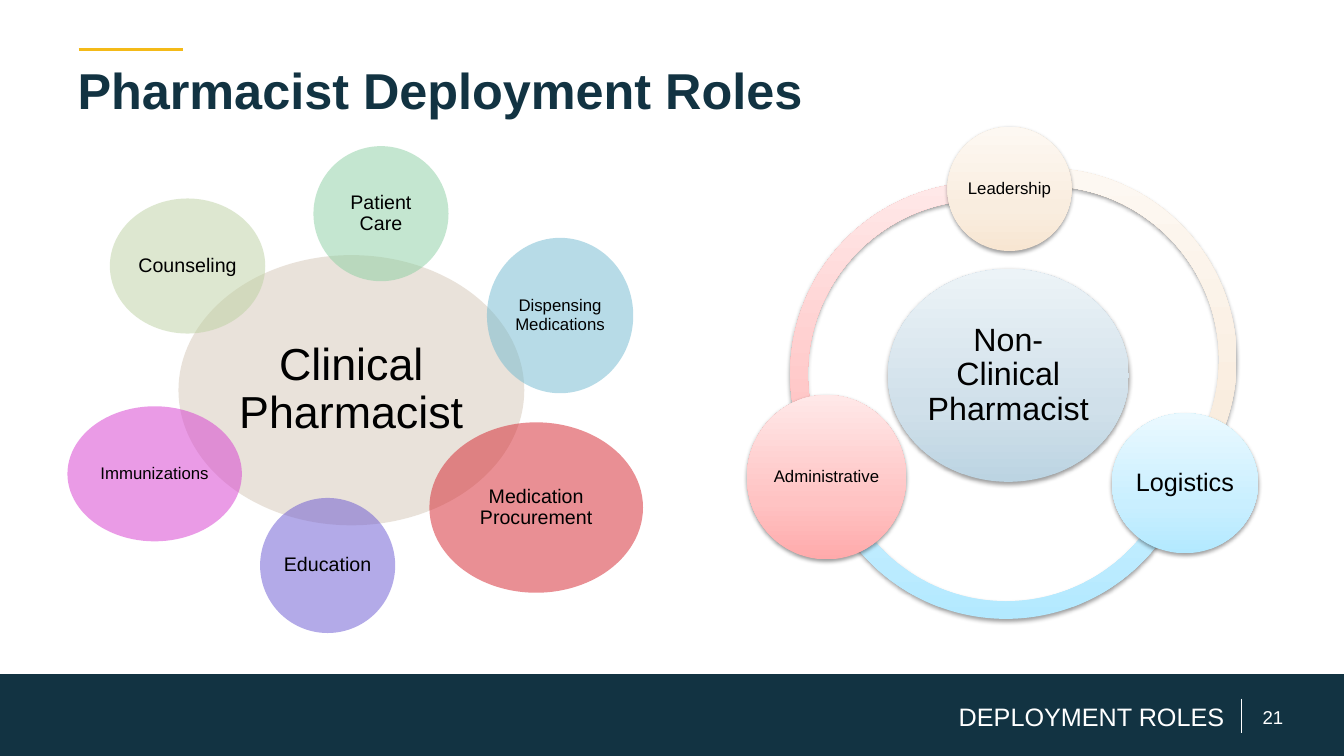
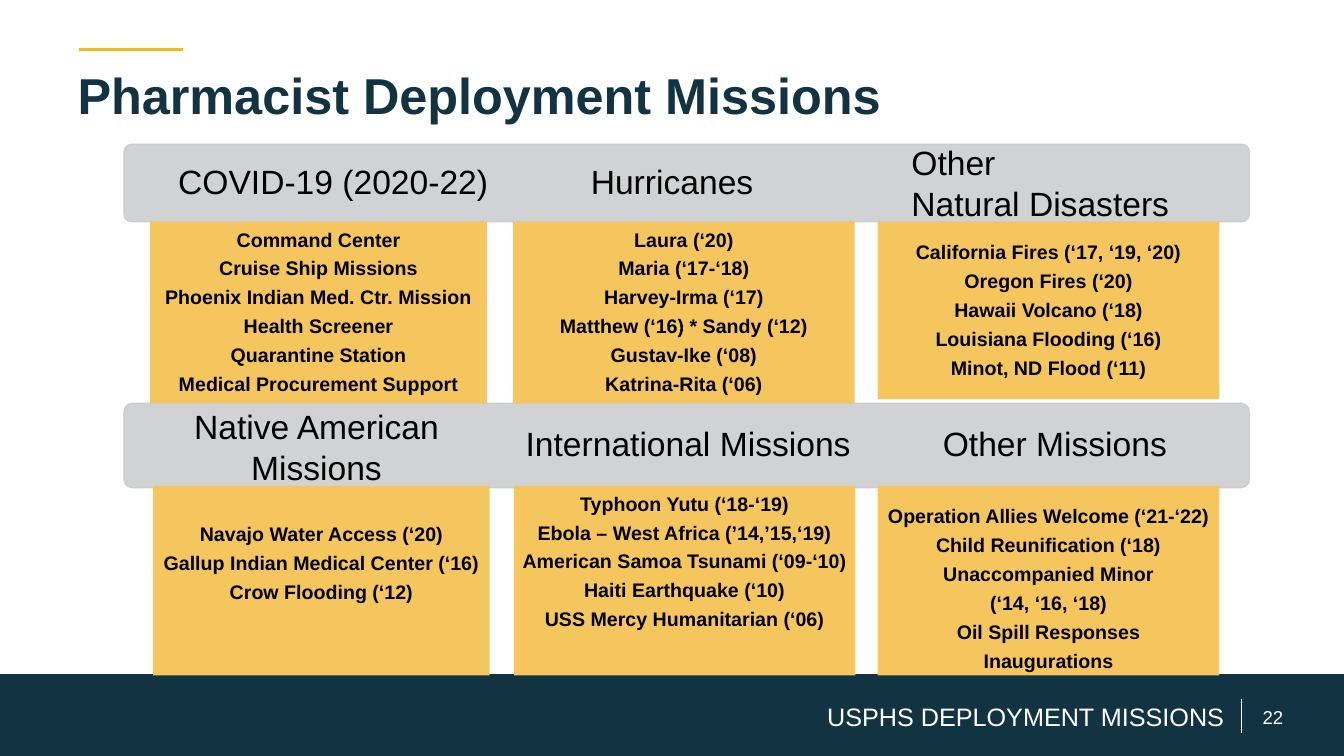
from lxml.etree import SubElement
from pptx import Presentation
from pptx.dml.color import RGBColor
from pptx.enum.shapes import MSO_CONNECTOR as Connector, MSO_SHAPE as Preset
from pptx.enum.text import MSO_ANCHOR as Anchor, PP_ALIGN as Align
from pptx.oxml.ns import qn
from pptx.util import Pt

FONT = "Arial"
COLORS = {
    "navy": "123342", "gold": "F4BA18", "white": "FFFFFF", "black": "000000",
    "bar": "CCCECF", "bar_edge": "C7C9CB", "card": "F5C65D",
    "sand": "D5C7B7", "olive": "BDD1A2", "green": "8BCFA2", "teal": "71B9D0",
    "violet": "6856D2", "magenta": "D639CF", "red": "D5212B",
}
GRADIENTS = {
    "rose": ("FFAAAB", "FFC3C3", "FFE8E8"),
    "sky": ("B3E9FF", "C9EFFF", "EAF9FF"),
    "cream": ("F8E6D2", "F9EDDF", "FDF8F2"),
    "steel": ("BCD4E2", "D0E0EA", "ECF3F7"),
}
GRADIENT_STOPS = (0, 35, 100)

# label, font size, colour, (left, top, width, height)
CLINICAL_ROLES = [
    ("Clinical Pharmacist", 32, "sand", (127.5, 182.2, 247, 193)),
    ("Counseling", 14, "olive", (78.5, 141.8, 111, 96.5)),
    ("Patient Care", 14, "green", (223.9, 104.4, 96.5, 96.5)),
    ("Dispensing Medications", 12, "teal", (347.8, 169.9, 104.5, 111)),
    ("Education", 14, "violet", (185.8, 355.7, 96.5, 96.5)),
    ("Immunizations", 12, "magenta", (48.2, 290.2, 124.6, 96.5)),
    ("Medication Procurement", 14, "red", (306.7, 301.7, 152.6, 121.7)),
]
NON_CLINICAL_ROLES = [
    ("Non-Clinical Pharmacist", 23, "steel", (634.3, 192.2, 172, 152)),
    ("Leadership", 12, "cream", (676.8, 90.7, 88.6, 88.6)),
    ("Logistics", 18, "sky", (794.2, 295.2, 104.4, 100)),
    ("Administrative", 12, "rose", (533.5, 282.2, 113.8, 117.4)),
]
# gradient, left, top, block arc adjustments
RING_SIZE = 273.6
RING_ARCS = [
    ("rose", 564.5, 130.3, (87.811, 167.015, 0.046)),
    ("sky", 581.8, 168.5, (10.397, 98.716, 0.046)),
    ("cream", 609.8, 120.2, (157.591, 21.386, 0.046)),
]

HEADER_BARS = [(88.5, 103, 804, 55.5), (88.5, 288, 804, 60.5)]
# lines, centre x, centre y, alignment
HEADERS = [
    (["COVID-19 (2020-22)"], 238, 129.5, Align.CENTER),
    (["Hurricanes"], 480, 129.5, Align.CENTER),
    (["Other", "Natural Disasters"], 776, 130.5, Align.LEFT),
    (["Native American", "Missions"], 226, 319, Align.CENTER),
    (["International Missions"], 491.5, 316.5, Align.CENTER),
    (["Other Missions"], 753.5, 316.5, Align.CENTER),
]
# (left, top, width, height), top inset, lines
MISSION_CARDS = [
    ((107.3, 158.4, 240.5, 129.6), 6, [
        "Command Center", "Cruise Ship Missions", "Phoenix Indian Med. Ctr. Mission",
        "Health Screener", "Quarantine Station", "Medical Procurement Support"]),
    ((366.5, 158.4, 244, 129.6), 6, [
        "Laura (‘20)", "Maria (‘17-‘18)", "Harvey-Irma (‘17)",
        "Matthew (‘16) * Sandy (‘12)", "Gustav-Ike (‘08)", "Katrina-Rita (‘06)"]),
    ((627, 158.4, 244, 126.7), 15, [
        "California Fires (‘17, ‘19, ‘20)", "Oregon Fires (‘20)", "Hawaii Volcano (‘18)",
        "Louisiana Flooding (‘16)", "Minot, ND Flood (‘11)"]),
    ((109.4, 347, 240.5, 135.4), 28, [
        "Navajo Water Access (‘20)", "Gallup Indian Medical Center (‘16)",
        "Crow Flooding (‘12)"]),
    ((367, 347, 244, 135.4), 6, [
        "Typhoon Yutu (‘18-‘19)", "Ebola – West Africa (’14,’15,‘19)",
        "American Samoa Tsunami (‘09-‘10)", "Haiti Earthquake (‘10)",
        "USS Mercy Humanitarian (‘06)"]),
    ((627, 347, 244, 135.4), 15, [
        "Operation Allies Welcome (‘21-‘22)", "Child Reunification (‘18)",
        "Unaccompanied Minor", "(‘14, ‘16, ‘18)", "Oil Spill Responses",
        "Inaugurations"]),
]


def rgb(name):
    return RGBColor.from_string(COLORS[name])


def write(shape, lines, size, color="black", bold=False, align=Align.CENTER,
          anchor=Anchor.MIDDLE, insets=(0, 0), spacing=1.0, gap=0):
    """Fill a shape with one paragraph per line; insets are (side, top)."""
    frame = shape.text_frame
    frame.word_wrap = True
    frame.vertical_anchor = anchor
    frame.margin_left = frame.margin_right = Pt(insets[0])
    frame.margin_top, frame.margin_bottom = Pt(insets[1]), Pt(0)
    for number, line in enumerate(lines):
        para = frame.paragraphs[0] if number == 0 else frame.add_paragraph()
        para.text = line
        para.alignment = align
        para.line_spacing = spacing
        para.space_after = Pt(gap)
        font = para.font
        font.name, font.size, font.bold = FONT, Pt(size), bold
        font.color.rgb = rgb(color)


def add_text(page, box, lines, size, **style):
    write(page.shapes.add_textbox(*map(Pt, box)), lines, size, **style)


def add_shape(page, preset, box, color=None):
    """Add a shape without outline or shadow, flat-filled if a colour is given."""
    shape = page.shapes.add_shape(preset, *map(Pt, box))
    shape.shadow.inherit = False
    shape.line.fill.background()
    if color:
        shape.fill.solid()
        shape.fill.fore_color.rgb = rgb(color)
    return shape


def add_line(page, start, end, color, width):
    line = page.shapes.add_connector(Connector.STRAIGHT, *map(Pt, start + end))
    line.line.color.rgb = rgb(color)
    line.line.width = Pt(width)
    SubElement(line._element.spPr, qn("a:effectLst"))


def set_opacity(shape, percent):
    for color in list(shape._element.spPr.iter(qn("a:srgbClr"))):
        SubElement(color, qn("a:alpha"), val=str(percent * 1000))


def set_glossy(shape, gradient):
    """Give a shape a bottom-to-top gradient and a soft shadow below."""
    shape.fill.gradient()
    shape.fill.gradient_angle = 90
    properties = shape._element.spPr
    stops = properties.find(".//" + qn("a:gsLst"))
    for old_stop in list(stops):
        stops.remove(old_stop)
    for position, color in zip(GRADIENT_STOPS, GRADIENTS[gradient]):
        stop = SubElement(stops, qn("a:gs"), pos=str(position * 1000))
        SubElement(stop, qn("a:srgbClr"), val=color)
    shadow = SubElement(properties.find(qn("a:effectLst")), qn("a:outerShdw"),
                        blurRad=str(Pt(3.1)), dist=str(Pt(1.6)),
                        dir="5400000", rotWithShape="0")
    color = SubElement(shadow, qn("a:srgbClr"), val=COLORS["black"])
    SubElement(color, qn("a:alpha"), val="38000")


def add_role(page, label, size, box, color=None):
    circle = add_shape(page, Preset.OVAL, box, color)
    write(circle, [label], size, insets=(1, 0), spacing=0.9)
    return circle


def add_page(deck, title, title_top, footer, number):
    page = deck.slides.add_slide(deck.slide_layouts[6])
    add_line(page, (56.2, 35.3), (131, 35.3), "gold", 2.5)
    add_shape(page, Preset.RECTANGLE, (0, 481.6, 960, 58.4), "navy")
    add_line(page, (887, 499), (887, 523.5), "white", 0.75)
    add_text(page, (881, 502, 56.5, 20), [str(number)], 13.3, color="white")
    add_text(page, (55.4, title_top, 850, 44), [title], 36, color="navy", bold=True,
             align=Align.LEFT, anchor=Anchor.TOP)
    add_text(page, (554.5, 500, 320, 24), [footer], 18, color="white", align=Align.RIGHT)
    return page


def add_roles_page(deck):
    page = add_page(deck, "Pharmacist Deployment Roles", 42.5, "DEPLOYMENT ROLES", 21)
    for gradient, left, top, adjustments in RING_ARCS:
        arc = add_shape(page, Preset.BLOCK_ARC, (left, top, RING_SIZE, RING_SIZE))
        for index, value in enumerate(adjustments):
            arc.adjustments[index] = value
        set_glossy(arc, gradient)
    for label, size, gradient, box in NON_CLINICAL_ROLES:
        set_glossy(add_role(page, label, size, box), gradient)
    for label, size, color, box in CLINICAL_ROLES:
        circle = add_role(page, label, size, box, color)
        set_opacity(circle, 50)


def add_missions_page(deck):
    page = add_page(deck, "Pharmacist Deployment Missions", 45.5,
                    "USPHS DEPLOYMENT MISSIONS", 22)
    for box in HEADER_BARS:
        bar = add_shape(page, Preset.ROUNDED_RECTANGLE, box, "bar")
        bar.adjustments[0] = 0.1
        bar.line.color.rgb = rgb("bar_edge")
        bar.line.width = Pt(0.75)
        set_opacity(bar, 90)
    for box, top_inset, lines in MISSION_CARDS:
        card = add_shape(page, Preset.RECTANGLE, box, "card")
        write(card, lines, 14, bold=True, anchor=Anchor.TOP,
              insets=(6, top_inset), spacing=0.9, gap=5.5)
    width, height = 250, 56
    for lines, center_x, center_y, align in HEADERS:
        box = (center_x - width / 2, center_y - height / 2, width, height)
        add_text(page, box, lines, 24, align=align)


def main():
    deck = Presentation()
    deck.slide_width, deck.slide_height = Pt(960), Pt(540)
    add_roles_page(deck)
    add_missions_page(deck)
    deck.save("out.pptx")


if __name__ == "__main__":
    main()
